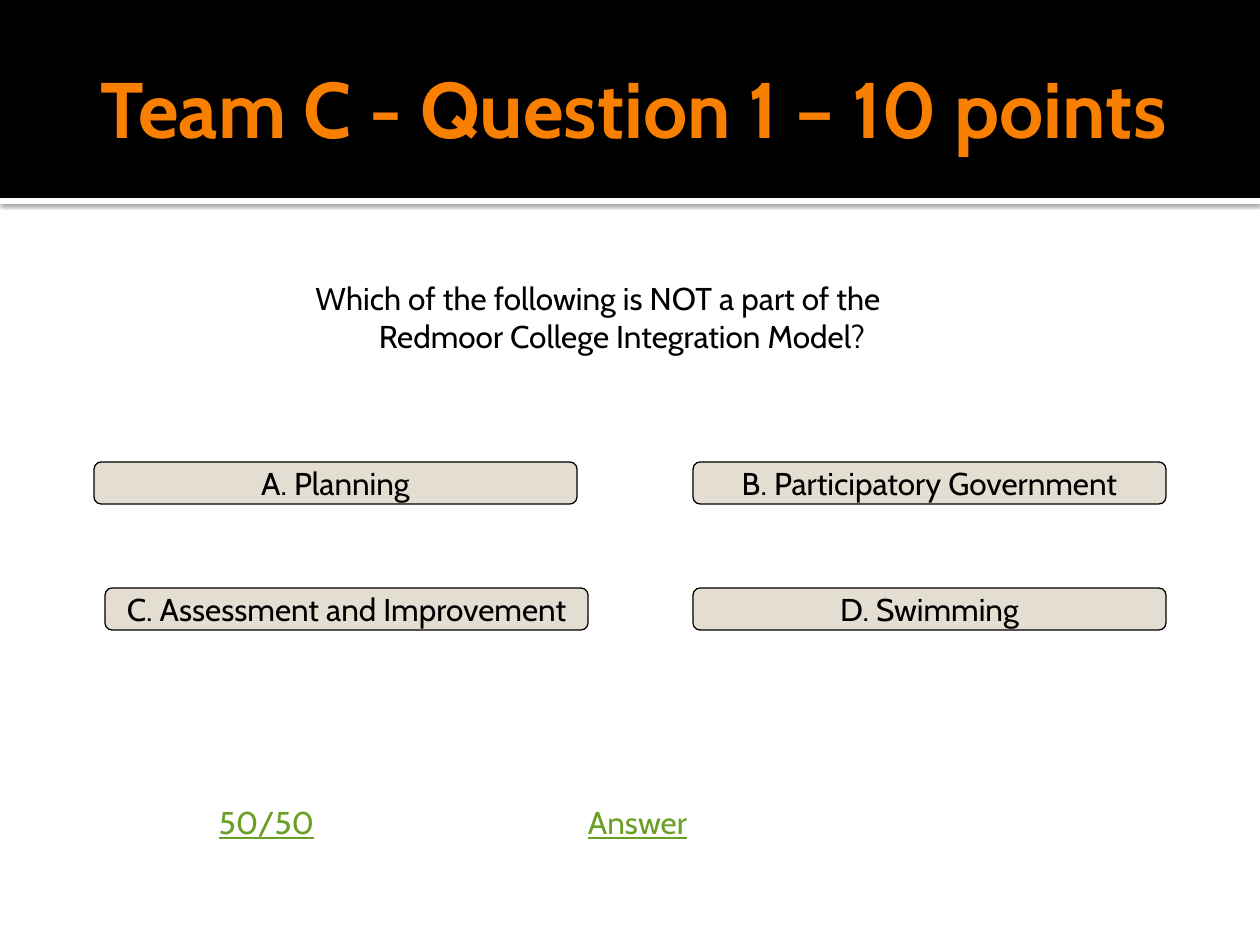
from dataclasses import dataclass

import pptx
import pptx.dml.color
import pptx.enum.shapes
import pptx.enum.text
import pptx.oxml
import pptx.oxml.ns
import pptx.util
from lxml import etree

PX = 914400 / 126
FONT = "Cabin"
BLACK, WHITE, ORANGE, BEIGE, GREEN = "000000", "FFFFFF", "F97F00", "E3DED1", "6B9F25"
SHAPES = pptx.enum.shapes.MSO_SHAPE
ANCHORS = pptx.enum.text.MSO_ANCHOR


@dataclass(frozen=True)
class Box:
    left: int
    top: int
    width: int
    height: int

    def emu(self) -> tuple[int, ...]:
        return tuple(px(v) for v in (self.left, self.top, self.width, self.height))


@dataclass(frozen=True)
class Answer:
    text: str
    box: Box


ANSWERS = [
    Answer("A. Planning", Box(94, 462, 483, 42)),
    Answer("B. Participatory Government", Box(693, 462, 473, 42)),
    Answer("C. Assessment and Improvement", Box(105, 588, 483, 42)),
    Answer("D. Swimming", Box(693, 588, 473, 42)),
]
HELP_OPTIONS = ["50/50", "Answer"]


def px(length: int) -> int:
    return round(length * PX)


def rgb(color: str) -> pptx.dml.color.RGBColor:
    return pptx.dml.color.RGBColor.from_string(color)


def write(frame, text: str, *, size: int = 18, color: str = BLACK, bold: bool = False,
          underline: bool = False, margin: int = 0, indent: int = 0) -> None:
    """Fill the frame's first paragraph with centred text."""
    paragraph = frame.paragraphs[0]
    paragraph.alignment = pptx.enum.text.PP_ALIGN.CENTER
    properties = paragraph._p.get_or_add_pPr()
    properties.set("marL", str(px(margin)))
    properties.set("indent", str(px(indent)))
    run = paragraph.add_run()
    run.text = text
    run.font.name = FONT
    run.font.size = pptx.util.Pt(size)
    run.font.bold = bold
    run.font.underline = underline
    run.font.color.rgb = rgb(color)


def add_block(slide, kind, box: Box, fill: str, line: str | None = None):
    block = slide.shapes.add_shape(kind, *box.emu())
    block.shadow.inherit = False
    block.fill.solid()
    block.fill.fore_color.rgb = rgb(fill)
    if line:
        block.line.color.rgb = rgb(line)
        block.line.width = pptx.util.Pt(0.75)
    else:
        block.line.fill.background()
    return block


def add_drop_shadow(block) -> None:
    effects = block._element.spPr.find(pptx.oxml.ns.qn("a:effectLst"))
    shadow = etree.SubElement(
        effects, pptx.oxml.ns.qn("a:outerShdw"),
        blurRad=str(pptx.util.Pt(2.5)), dist=str(pptx.util.Pt(0.8)),
        dir="5400000", algn="tl", rotWithShape="0")
    color = etree.SubElement(shadow, pptx.oxml.ns.qn("a:srgbClr"), val=BLACK)
    etree.SubElement(color, pptx.oxml.ns.qn("a:alpha"), val="60000")


def add_text_box(slide, box: Box):
    frame = slide.shapes.add_textbox(*box.emu()).text_frame
    frame.word_wrap = True
    return frame


def add_header(slide) -> None:
    add_drop_shadow(add_block(slide, SHAPES.RECTANGLE, Box(0, 198, 1260, 6), WHITE))
    add_block(slide, SHAPES.RECTANGLE, Box(0, 0, 1260, 198), BLACK)
    title = add_text_box(slide, Box(63, 21, 1134, 173))
    title.vertical_anchor = ANCHORS.MIDDLE
    title.margin_right = px(6)
    write(title, "Team C - Question 1 – 10 points", size=45, color=ORANGE, bold=True)


def add_answer(slide, answer: Answer) -> None:
    button = add_block(slide, SHAPES.ROUNDED_RECTANGLE, answer.box, BEIGE, BLACK)
    button.adjustments[0] = 0.17
    button.text_frame.word_wrap = False
    button.text_frame.vertical_anchor = ANCHORS.MIDDLE
    write(button.text_frame, answer.text)


def add_help_table(slide) -> None:
    table = slide.shapes.add_table(1, 3, *Box(73, 798, 1113, 73).emu()).table
    table.first_row = False
    table.horz_banding = False
    for cell in table.iter_cells():
        cell.fill.background()
    for column, option in enumerate(HELP_OPTIONS):
        write(table.cell(0, column).text_frame, option,
              color=GREEN, underline=True, margin=16)


def main() -> None:
    deck = pptx.Presentation()
    deck.slide_width, deck.slide_height = px(1260), px(945)
    slide = deck.slides.add_slide(deck.slide_layouts[6])
    add_header(slide)
    question = add_text_box(slide, Box(283, 273, 630, 88))
    write(question, "Which of the following is NOT a part of the Redmoor College Integration Model?",
          margin=48, indent=-48)
    for answer in ANSWERS:
        add_answer(slide, answer)
    add_help_table(slide)
    deck.save("out.pptx")


if __name__ == "__main__":
    main()
